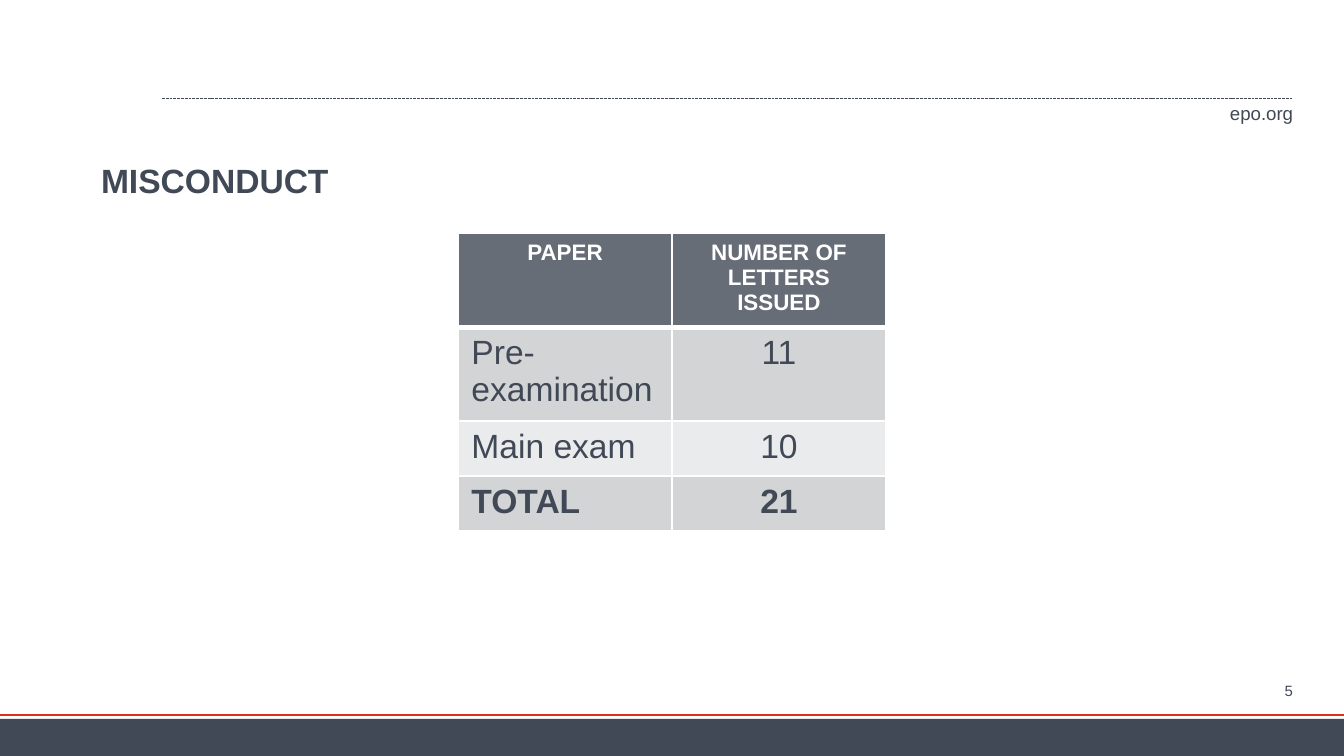
from dataclasses import dataclass

from lxml.etree import SubElement
from pptx import Presentation
from pptx.dml.color import RGBColor
from pptx.enum.dml import MSO_LINE_DASH_STYLE as Dash
from pptx.enum.shapes import MSO_CONNECTOR as Connector, MSO_SHAPE as Shape
from pptx.enum.text import MSO_ANCHOR as Anchor, PP_ALIGN as Align
from pptx.oxml.ns import qn
from pptx.util import Emu, Pt

EMU_PER_PX = 914400 / 134.4


@dataclass(frozen=True)
class Theme:
    font: str = "Arial"
    slate: str = "404955"
    red: str = "D93317"
    white: str = "FFFFFF"
    header: str = "666D77"
    band_dark: str = "D3D4D6"
    band_light: str = "EAEBEC"
    title_size: int = 18
    body_size: int = 18
    header_size: int = 12
    address_size: int = 10
    number_size: int = 8


THEME = Theme()


@dataclass(frozen=True)
class Label:
    text: str
    left: int
    top: int
    width: int
    height: int
    size: int
    bold: bool = False
    align: Align = Align.RIGHT
    anchor: Anchor = Anchor.MIDDLE
    wrap: bool = True


@dataclass(frozen=True)
class Rule:
    left: int
    right: int
    y: int
    color: str
    weight: float
    dash: Dash | None = None


@dataclass(frozen=True)
class Row:
    paper: str
    letters: str
    height: int
    fill: str
    color: str = THEME.slate
    size: int = THEME.body_size
    bold: bool = False
    paper_align: Align = Align.LEFT
    bottom_weight: int = 1


LABELS = [
    Label("epo.org", 1230, 101, 63, 23, THEME.address_size, wrap=False),
    Label("MISCONDUCT", 101, 118, 1192, 82, THEME.title_size, True,
          Align.LEFT, Anchor.BOTTOM),
    Label("5", 1214, 682, 79, 18, THEME.number_size),
]
RULES = [
    Rule(162, 1293, 99, THEME.slate, 0.5, Dash.SQUARE_DOT),
    Rule(0, 1344, 715, THEME.red, 1.5),
]
ROWS = [
    Row("PAPER", "NUMBER OF LETTERS ISSUED", 58, THEME.header, THEME.white,
        THEME.header_size, True, Align.CENTER, 3),
    Row("Pre-examination", "11", 55, THEME.band_dark),
    Row("Main exam", "10", 55, THEME.band_light),
    Row("TOTAL", "21", 55, THEME.band_dark, bold=True),
]


def px(length: int) -> Emu:
    return Emu(round(length * EMU_PER_PX))


def rgb(color: str) -> RGBColor:
    return RGBColor.from_string(color)


def write(para, text: str, size: int, color: str, bold: bool, align: Align) -> None:
    para.text = text
    para.alignment = align
    font = para.font
    font.name, font.size, font.bold = THEME.font, Pt(size), bold
    font.color.rgb = rgb(color)


def add_label(page, label: Label) -> None:
    box = page.shapes.add_textbox(px(label.left), px(label.top),
                                  px(label.width), px(label.height))
    frame = box.text_frame
    frame.margin_left = frame.margin_right = 0
    frame.margin_top = frame.margin_bottom = 0
    frame.word_wrap = label.wrap
    frame.vertical_anchor = label.anchor
    write(frame.paragraphs[0], label.text, label.size, THEME.slate,
          label.bold, label.align)


def add_rule(page, rule: Rule) -> None:
    line = page.shapes.add_connector(Connector.STRAIGHT, px(rule.left), px(rule.y),
                                     px(rule.right), px(rule.y))
    line.line.color.rgb = rgb(rule.color)
    line.line.width = Pt(rule.weight)
    if rule.dash is not None:
        line.line.dash_style = rule.dash
    SubElement(line._element.spPr, qn("a:effectLst"))


def add_footer_band(page) -> None:
    band = page.shapes.add_shape(Shape.RECTANGLE, 0, px(719), px(1344), px(37))
    band.shadow.inherit = False
    band.fill.solid()
    band.fill.fore_color.rgb = rgb(THEME.slate)
    band.line.fill.background()


def set_borders(cell, weights: dict[str, int]) -> None:
    properties = cell._tc.get_or_add_tcPr()
    for index, (side, weight) in enumerate(weights.items()):
        border = SubElement(properties, qn(f"a:{side}"), w=str(Pt(weight)))
        fill = SubElement(border, qn("a:solidFill"))
        SubElement(fill, qn("a:srgbClr"), val=THEME.white)
        properties.insert(index, border)  # borders come before the fill


def add_letters_table(page, rows: list[Row], left: int, top: int,
                      column_width: int) -> None:
    height = sum(row.height for row in rows)
    table = page.shapes.add_table(len(rows), 2, px(left), px(top),
                                  px(2 * column_width), px(height)).table
    for column in table.columns:
        column.width = px(column_width)
    top_weight = 1
    for index, row in enumerate(rows):
        table.rows[index].height = px(row.height)
        values = [(row.paper, row.paper_align), (row.letters, Align.CENTER)]
        for cell, (text, align) in zip(table.rows[index].cells, values):
            cell.fill.solid()
            cell.fill.fore_color.rgb = rgb(row.fill)
            set_borders(cell, {"lnL": 1, "lnR": 1, "lnT": top_weight,
                               "lnB": row.bottom_weight})
            write(cell.text_frame.paragraphs[0], text, row.size, row.color,
                  row.bold, align)
        top_weight = row.bottom_weight


def main() -> None:
    deck = Presentation()
    deck.slide_width, deck.slide_height = px(1344), px(756)
    page = deck.slides.add_slide(deck.slide_layouts[6])

    # Page frame
    add_footer_band(page)
    for rule in RULES:
        add_rule(page, rule)

    # Address, title and page number
    for label in LABELS:
        add_label(page, label)

    # Letters issued per paper
    add_letters_table(page, ROWS, 458, 233, 214)

    deck.save("out.pptx")


if __name__ == "__main__":
    main()
